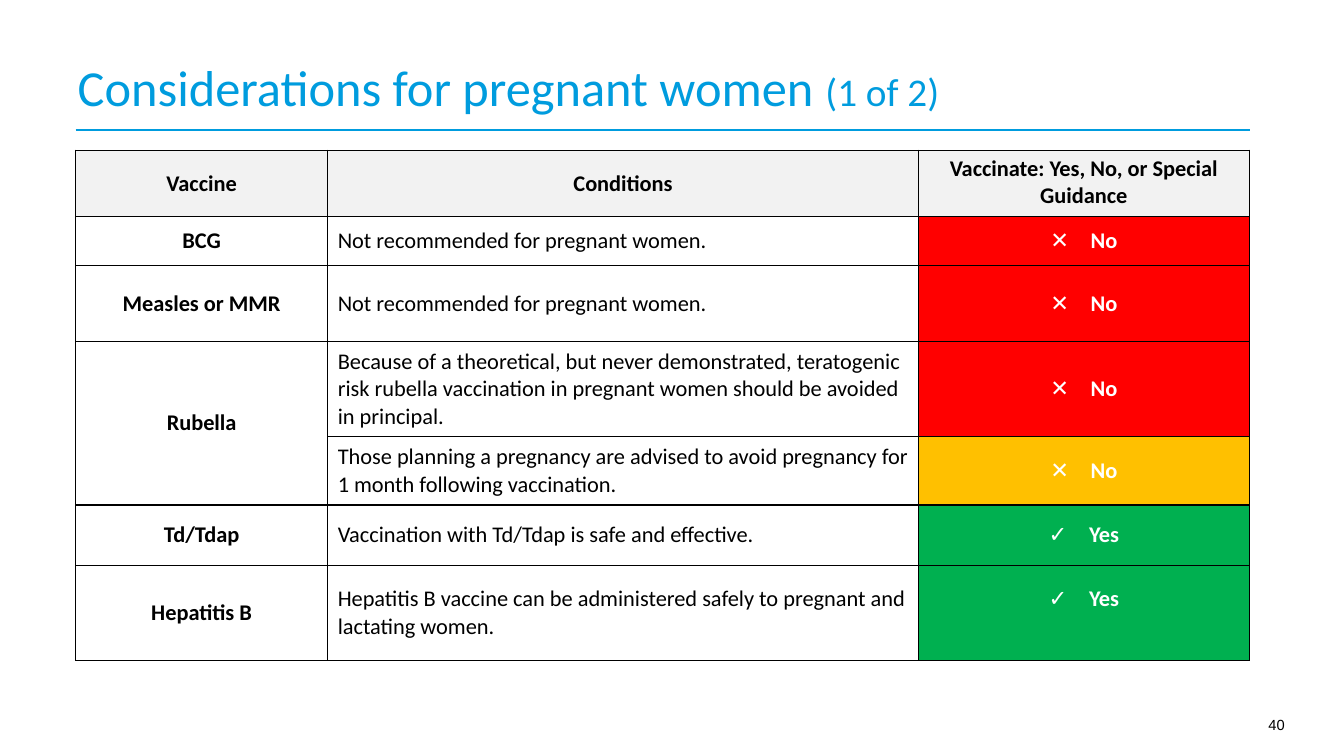
from lxml import etree
from pptx import Presentation
from pptx.dml.color import RGBColor
from pptx.enum.shapes import MSO_CONNECTOR
from pptx.enum.text import MSO_ANCHOR as ANCHOR, PP_ALIGN as ALIGN
from pptx.oxml import parse_xml
from pptx.oxml.ns import nsdecls, qn
from pptx.util import Inches, Pt

COLORS = {
    "blue": "009CDE", "black": "000000", "white": "FFFFFF",
    "header": "F2F2F2", "red": "FF0000", "amber": "FFC000", "green": "00B050",
}
NO, CAUTION, YES = ("✕", "No", "red"), ("✕", "No", "amber"), ("✓", "Yes", "green")

HEADERS = ["Vaccine", "Conditions", "Vaccinate: Yes, No, or Special Guidance"]
COL_WIDTHS = [2.5, 5.86, 3.28]
HEADER_HEIGHT = 0.66
# Row height, vaccine (None continues the one above), conditions, verdict
ROWS = [
    (0.48, "BCG", "Not recommended for pregnant women.", NO),
    (0.76, "Measles or MMR", "Not recommended for pregnant women.", NO),
    (0.94, "Rubella", "Because of a theoretical, but never demonstrated, teratogenic risk "
     "rubella vaccination in pregnant women should be avoided in principal.", NO),
    (0.68, None, "Those planning a pregnancy are advised to avoid pregnancy "
     "for 1 month following vaccination.", CAUTION),
    (0.6, "Td/Tdap", "Vaccination with Td/Tdap is safe and effective.", YES),
    (0.94, "Hepatitis B", "Hepatitis B vaccine can be administered safely to pregnant "
     "and lactating women.", YES),
]


def rgb(name):
    return RGBColor.from_string(COLORS[name])


def add_run(p, text, size, color, bold=False, font="Calibri"):
    r = p.add_run()
    r.text = text
    r.font.name, r.font.size, r.font.bold = font, Pt(size), bold
    r.font.color.rgb = rgb(color)


def add_text_box(s, x, y, w, h, anchor, margins):
    tf = s.shapes.add_textbox(Inches(x), Inches(y), Inches(w), Inches(h)).text_frame
    tf.word_wrap, tf.vertical_anchor = True, anchor
    tf.margin_left, tf.margin_top, tf.margin_right, tf.margin_bottom = map(Inches, margins)
    return tf.paragraphs[0]


def add_title(s, x, y, w, h):
    p = add_text_box(s, x, y, w, h, ANCHOR.BOTTOM, (0.02, 0, 0.39, 0))
    p.line_spacing = 0.9
    add_run(p, "Considerations for pregnant women ", 36, "blue")
    add_run(p, "(1 of 2)", 28, "blue")


def add_rule(s, x, y, w):
    line = s.shapes.add_connector(
        MSO_CONNECTOR.STRAIGHT, Inches(x), Inches(y), Inches(x + w), Inches(y))
    line.line.color.rgb, line.line.width = rgb("blue"), Pt(1.5)
    etree.SubElement(line._element.spPr, qn("a:effectLst"))


def add_page_number(s, x, y, w, h):
    p = add_text_box(s, x, y, w, h, ANCHOR.TOP, (0.1, 0.05, 0.1, 0.05))
    p.alignment = ALIGN.RIGHT
    add_run(p, "40", 10.5, "black", font="Arial")


def set_borders(cell):
    tc_pr = cell._tc.get_or_add_tcPr()
    for i, side in enumerate("LRTB"):
        tc_pr.insert(i, parse_xml(
            f'<a:ln{side} {nsdecls("a")} w="{Pt(1)}"><a:solidFill>'
            f'<a:srgbClr val="{COLORS["black"]}"/></a:solidFill></a:ln{side}>'))


def set_bullet(p, char):
    p_pr = p._p.get_or_add_pPr()
    p_pr.set("marL", str(Inches(0.4)))
    p_pr.set("indent", str(-Inches(0.4)))
    etree.SubElement(p_pr, qn("a:buFont")).set("typeface", "Arial")
    etree.SubElement(p_pr, qn("a:buChar")).set("char", char)


def fill_cell(cell, text, fill=None, color="black", bold=True, align=ALIGN.CENTER, bullet=None):
    cell.vertical_anchor = ANCHOR.MIDDLE
    if fill:
        cell.fill.solid()
        cell.fill.fore_color.rgb = rgb(fill)
    else:
        cell.fill.background()
    p = cell.text_frame.paragraphs[0]
    p.alignment = align
    if bullet:
        set_bullet(p, bullet)
    add_run(p, text, 16, color, bold)


def add_vaccine_table(s, x, y):
    heights = [HEADER_HEIGHT] + [row[0] for row in ROWS]
    table = s.shapes.add_table(
        len(heights), len(COL_WIDTHS), Inches(x), Inches(y),
        Inches(sum(COL_WIDTHS)), Inches(sum(heights))).table
    table.first_row = table.horz_banding = False
    for col, width in zip(table.columns, COL_WIDTHS):
        col.width = Inches(width)
    for row, height in zip(table.rows, heights):
        row.height = Inches(height)

    # Header row
    for c, text in enumerate(HEADERS):
        fill_cell(table.cell(0, c), text, "header")
    table.cell(0, 2).vertical_anchor = ANCHOR.TOP

    # Vaccine rows
    for i, (_, vaccine, conditions, (mark, verdict, fill)) in enumerate(ROWS, 1):
        if vaccine:
            fill_cell(table.cell(i, 0), vaccine)
        else:
            table.cell(i - 1, 0).merge(table.cell(i, 0))
        fill_cell(table.cell(i, 1), conditions, bold=False, align=ALIGN.LEFT)
        fill_cell(table.cell(i, 2), verdict, fill, "white", bullet=mark)
    # The last verdict sits level with the first line of its conditions
    table.cell(len(ROWS), 2).margin_bottom = Inches(0.32)

    for cell in table.iter_cells():
        set_borders(cell)


def main():
    prs = Presentation()
    prs.slide_width, prs.slide_height = Inches(13.33), Inches(7.5)
    s = prs.slides.add_slide(prs.slide_layouts[6])
    add_page_number(s, 11.95, 7.05, 0.89, 0.29)
    add_vaccine_table(s, 0.75, 1.49)
    add_title(s, 0.75, 0.37, 10.48, 0.79)
    add_rule(s, 0.75, 1.29, 11.65)
    prs.save("out.pptx")


if __name__ == "__main__":
    main()
